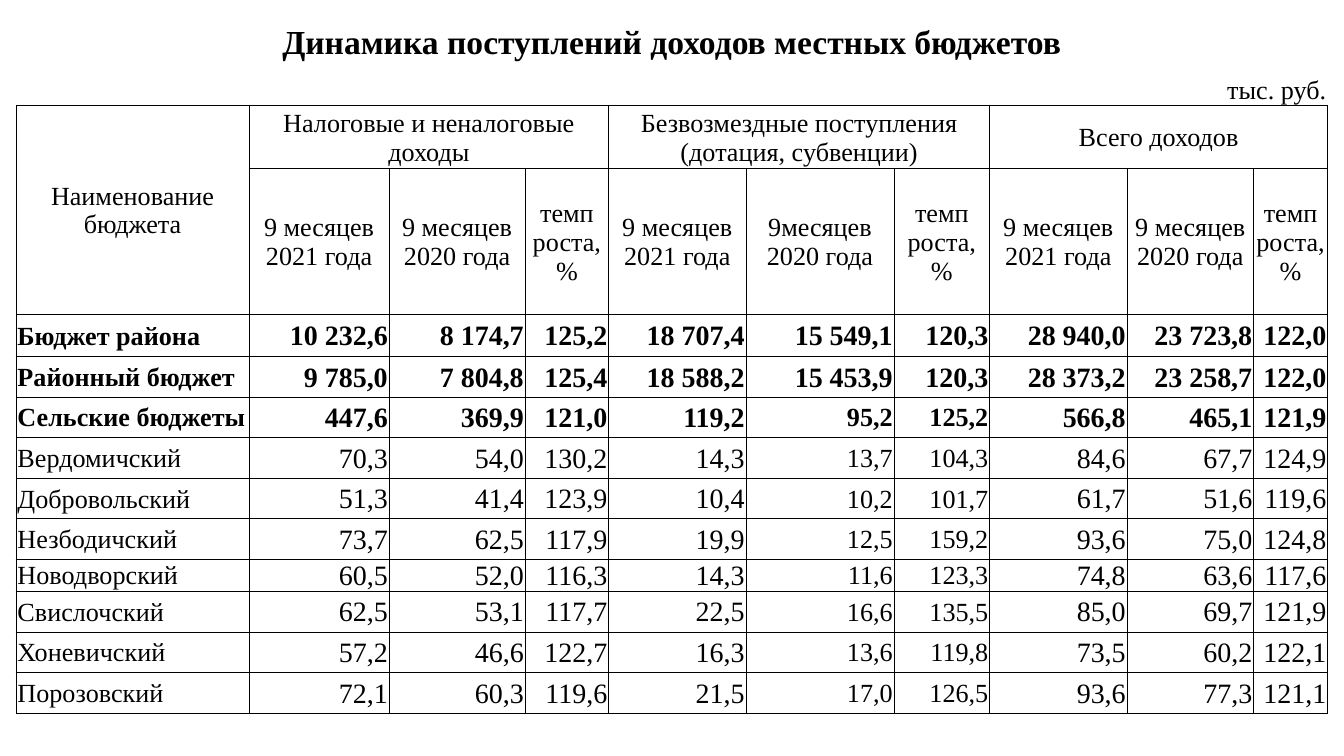
from pptx import Presentation
from pptx.dml.color import RGBColor
from pptx.enum.text import MSO_ANCHOR, PP_ALIGN
from pptx.oxml.ns import qn
from pptx.util import Inches, Pt
from lxml.etree import SubElement

COLOURS = {"text": "000000", "line": "000000"}
PLAIN_STYLE = "{2D5ABB26-0587-4C30-8999-92F81FD0307C}"
TABLE_WIDTH, TABLE_HEIGHT = 9.76, 5.07
WIDTHS = [1.73, 1.04, 0.74, 0.27, 0.62, 0.89, 0.13, 1.1, 0.71, 0.73, 0.29, 0.6, 0.34, 0.55]
HEIGHTS = [0.32, 0.32, 0.47, 1.08, 0.31] + [0.3] * 5 + [0.14] + [0.3] * 3
DATA_SPANS = [1, 1, 2, 1, 2, 1, 1, 2, 2, 1]
UNIT_SPANS = [1, 2, 3, 3, 1, 2, 2]
GROUP_SPANS = [1, 4, 4, 5]
UNIT_ROW, GROUP_ROW, PERIOD_ROW, FIRST_DATA_ROW = 1, 2, 3, 4
TITLE = "Динамика поступлений доходов местных бюджетов"
UNIT = "тыс. руб."
GROUPS = [
    "Наименование бюджета",
    "Налоговые и неналоговые доходы",
    "Безвозмездные поступления (дотация, субвенции)",
    "Всего доходов",
]
YEAR_2021, YEAR_2020, GROWTH = "9 месяцев\n2021 года", "9 месяцев\n2020 года", "темп\nроста, %"
PERIODS = [
    "", YEAR_2021, YEAR_2020, GROWTH,
    "9 месяцев 2021 года", "9месяцев\n2020 года", GROWTH,
    YEAR_2021, YEAR_2020, GROWTH,
]
BUDGETS = [
    ("Бюджет района", "10 232,6", "8 174,7", "125,2", "18 707,4", "15 549,1", "120,3", "28 940,0", "23 723,8", "122,0"),
    ("Районный бюджет", "9 785,0", "7 804,8", "125,4", "18 588,2", "15 453,9", "120,3", "28 373,2", "23 258,7", "122,0"),
    ("Сельские бюджеты", "447,6", "369,9", "121,0", "119,2", "95,2", "125,2", "566,8", "465,1", "121,9"),
    ("Вердомичский", "70,3", "54,0", "130,2", "14,3", "13,7", "104,3", "84,6", "67,7", "124,9"),
    ("Добровольский", "51,3", "41,4", "123,9", "10,4", "10,2", "101,7", "61,7", "51,6", "119,6"),
    ("Незбодичский", "73,7", "62,5", "117,9", "19,9", "12,5", "159,2", "93,6", "75,0", "124,8"),
    ("Новодворский", "60,5", "52,0", "116,3", "14,3", "11,6", "123,3", "74,8", "63,6", "117,6"),
    ("Свислочский", "62,5", "53,1", "117,7", "22,5", "16,6", "135,5", "85,0", "69,7", "121,9"),
    ("Хоневичский", "57,2", "46,6", "122,7", "16,3", "13,6", "119,8", "73,5", "60,2", "122,1"),
    ("Порозовский", "72,1", "60,3", "119,6", "21,5", "17,0", "126,5", "93,6", "77,3", "121,1"),
]
SUMMARY_COUNT = 3
GRANT_COLUMNS = (5, 6)


class SlideBuilder:
    """Holds the text style and the current slide."""

    def __init__(self, page, font):
        self.page = page
        self.font = font

    def table(self, left, top, width, height, column_shares, row_shares):
        frame = self.page.shapes.add_table(
            len(row_shares), len(column_shares),
            Inches(left), Inches(top), Inches(width), Inches(height))
        table = frame.table
        table.first_row = table.horz_banding = False
        table._tbl.tblPr.find(qn("a:tableStyleId")).text = PLAIN_STYLE
        for column, share in zip(table.columns, column_shares):
            column.width = Inches(width * share / sum(column_shares))
        for row, share in zip(table.rows, row_shares):
            row.height = Inches(height * share / sum(row_shares))
        return table

    def cell_format(self, cell, sides):
        margins = {"margin_left": 0.01, "margin_right": 0.01, "margin_top": 0.01, "margin_bottom": 0}
        for name, value in margins.items():
            setattr(cell, name, Inches(value))
        properties = cell._tc.get_or_add_tcPr()
        for side in sides:
            line = SubElement(properties, qn(f"a:ln{side}"), w=str(Pt(0.5)))
            fill = SubElement(line, qn("a:solidFill"))
            SubElement(fill, qn("a:srgbClr"), val=COLOURS["line"])
        cell.fill.background()

    def cell_text(self, cell, text, align=PP_ALIGN.CENTER, anchor=MSO_ANCHOR.MIDDLE, size=14, bold=False):
        cell.vertical_anchor = anchor
        frame = cell.text_frame
        for index, words in enumerate(text.split("\n")):
            para = frame.add_paragraph() if index else frame.paragraphs[0]
            para.alignment = align
            span = para.add_run()
            span.text = words
            for name, value in {"name": self.font, "size": Pt(size), "bold": bold}.items():
                setattr(span.font, name, value)
            span.font.color.rgb = RGBColor.from_string(COLOURS["text"])

    def merged_row(self, table, row, spans):
        cells, column = [], 0
        for span in spans:
            cell = table.cell(row, column)
            if span > 1:
                cell.merge(table.cell(row, column + span - 1))
            cells.append(cell)
            column += span
        return cells


def main():
    deck = Presentation()
    deck.slide_width = Inches(10)
    deck.slide_height = deck.slide_width * 9 // 16
    page = deck.slides.add_slide(deck.slide_layouts[6])
    builder = SlideBuilder(page, "Times New Roman")
    table = builder.table(0.12, 0.14, TABLE_WIDTH, TABLE_HEIGHT, WIDTHS, HEIGHTS)

    for row in range(len(HEIGHTS)):
        sides = "LRTB" if row >= GROUP_ROW else "B" * row
        for column in range(len(WIDTHS)):
            builder.cell_format(table.cell(row, column), sides)

    title = builder.merged_row(table, 0, [len(WIDTHS)])[0]
    builder.cell_text(title, TITLE, anchor=MSO_ANCHOR.BOTTOM, size=18, bold=True)
    unit = builder.merged_row(table, UNIT_ROW, UNIT_SPANS)[-1]
    builder.cell_text(unit, UNIT, PP_ALIGN.RIGHT, MSO_ANCHOR.BOTTOM)

    table.cell(GROUP_ROW, 0).merge(table.cell(PERIOD_ROW, 0))
    for row, spans, labels in ((GROUP_ROW, GROUP_SPANS, GROUPS), (PERIOD_ROW, DATA_SPANS, PERIODS)):
        for cell, label in zip(builder.merged_row(table, row, spans), labels):
            if label:
                builder.cell_text(cell, label)

    for index, budget in enumerate(BUDGETS):
        cells = builder.merged_row(table, FIRST_DATA_ROW + index, DATA_SPANS)
        for column, (cell, value) in enumerate(zip(cells, budget)):
            small = column == 0 or (column in GRANT_COLUMNS and index >= SUMMARY_COUNT - 1)
            builder.cell_text(
                cell, value, PP_ALIGN.RIGHT if column else PP_ALIGN.LEFT,
                size=14 if small else 15, bold=index < SUMMARY_COUNT)

    deck.save("out.pptx")


if __name__ == "__main__":
    main()
